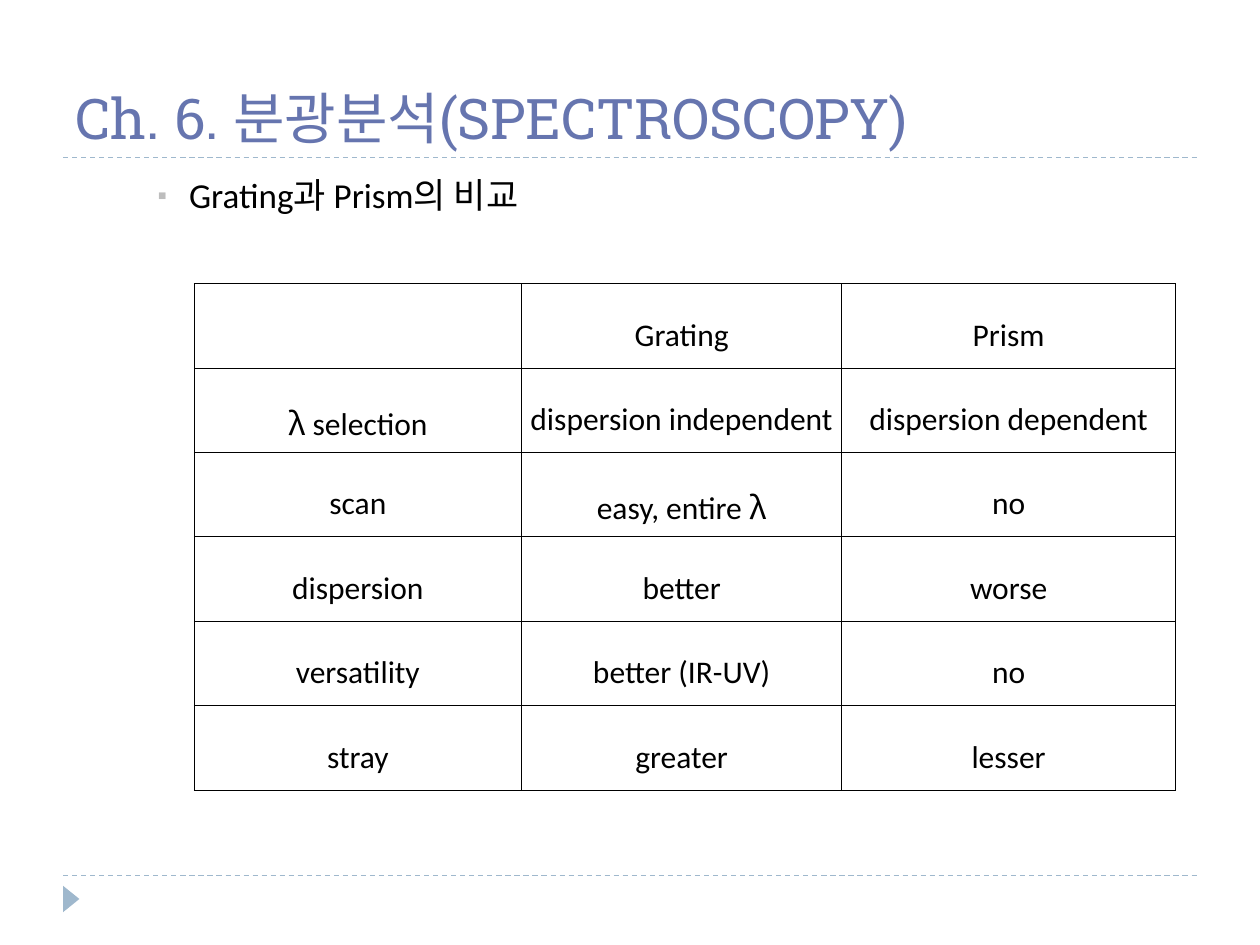
from dataclasses import dataclass

from lxml.etree import SubElement
from pptx import Presentation
from pptx.dml.color import RGBColor
from pptx.enum.dml import MSO_LINE
from pptx.enum.shapes import MSO_CONNECTOR, MSO_SHAPE
from pptx.enum.text import MSO_ANCHOR, PP_ALIGN
from pptx.oxml.ns import qn
from pptx.util import Inches, Pt

COLORS = {
    "title": "6675AF",
    "text": "000000",
    "bullet": "BDBDBD",
    "accent": "9FB8CD",
    "border": "000000",
}
TITLE_FONT = "Roboto Slab"
BODY_FONT = "Calibri"
KOREAN_FONT = "Noto Sans CJK KR"

COLUMN_WIDTHS = (2.6, 2.54, 2.65)
ROW_HEIGHT = 0.67
BORDER_WIDTH = Pt(0.28)


@dataclass(frozen=True)
class Comparison:
    feature: str
    grating: str
    prism: str


COMPARISONS = (
    Comparison("", "Grating", "Prism"),
    Comparison("λ selection", "dispersion independent", "dispersion dependent"),
    Comparison("scan", "easy, entire λ", "no"),
    Comparison("dispersion", "better", "worse"),
    Comparison("versatility", "better (IR-UV)", "no"),
    Comparison("stray", "greater", "lesser"),
)


def rgb(name: str) -> RGBColor:
    return RGBColor.from_string(COLORS[name])


def format_run(run, size: float, font_name: str, color: str) -> None:
    run.font.size = Pt(size)
    run.font.name = font_name
    run.font.color.rgb = rgb(color)
    SubElement(run.font._element, qn("a:ea"), typeface=KOREAN_FONT)


def place(shape, left: float, top: float, width: float, height: float) -> None:
    shape.left, shape.top = Inches(left), Inches(top)
    shape.width, shape.height = Inches(width), Inches(height)


def add_rule(slide, top: float) -> None:
    """Draw a dashed line across the slide between its margins."""
    rule = slide.shapes.add_connector(
        MSO_CONNECTOR.STRAIGHT, Inches(0.5), Inches(top), Inches(9.5), Inches(top))
    rule.line.color.rgb = rgb("accent")
    rule.line.width = Pt(0.75)
    rule.line.dash_style = MSO_LINE.DASH
    SubElement(rule._element.spPr, qn("a:effectLst"))


def add_corner_triangle(slide) -> None:
    triangle = slide.shapes.add_shape(
        MSO_SHAPE.ISOSCELES_TRIANGLE, Inches(0.46), Inches(7.07), Inches(0.21), Inches(0.13))
    triangle.rotation = 90
    triangle.shadow.inherit = False
    triangle.fill.solid()
    triangle.fill.fore_color.rgb = rgb("accent")
    triangle.line.fill.background()


def fill_title(title) -> None:
    place(title, 0.5, 0.17, 9, 1.08)
    text_frame = title.text_frame
    text_frame.text = "Ch. 6. 분광분석(SPECTROSCOPY)"
    text_frame.vertical_anchor = MSO_ANCHOR.BOTTOM
    paragraph = text_frame.paragraphs[0]
    paragraph.alignment = PP_ALIGN.LEFT
    format_run(paragraph.runs[0], 32, TITLE_FONT, "title")


def fill_body(body) -> None:
    place(body, 0.5, 1.33, 9, 5.4)
    body.text_frame.text = "Grating과 Prism의 비교"
    paragraph = body.text_frame.paragraphs[0]
    paragraph.level = 2
    paragraph.space_before = Pt(5)
    format_run(paragraph.runs[0], 20, BODY_FONT, "text")
    properties = paragraph._p.get_or_add_pPr()
    properties.set("marL", str(Inches(0.9)))
    properties.set("indent", str(Inches(-0.25)))
    bullet_color = SubElement(properties, qn("a:buClr"))
    SubElement(bullet_color, qn("a:srgbClr"), val=COLORS["bullet"])
    SubElement(properties, qn("a:buSzPct"), val="76000")
    SubElement(properties, qn("a:buChar"), char="▪")


def add_borders(cell) -> None:
    properties = cell._tc.get_or_add_tcPr()
    for side in ("lnL", "lnR", "lnT", "lnB"):
        line = SubElement(properties, qn(f"a:{side}"), w=str(BORDER_WIDTH))
        fill = SubElement(line, qn("a:solidFill"))
        SubElement(fill, qn("a:srgbClr"), val=COLORS["border"])


def fill_cell(cell, text: str) -> None:
    add_borders(cell)
    cell.fill.background()
    cell.vertical_anchor = MSO_ANCHOR.MIDDLE
    cell.margin_left = cell.margin_right = Inches(0.07)
    cell.margin_top = cell.margin_bottom = Inches(0.02)
    paragraph = cell.text_frame.paragraphs[0]
    paragraph.alignment = PP_ALIGN.CENTER
    paragraph.line_spacing = 1.5
    before, symbol, after = text.partition("λ")
    for part in filter(None, (before, symbol, after)):
        run = paragraph.add_run()
        run.text = part
        format_run(run, 18, KOREAN_FONT if part == "λ" else BODY_FONT, "text")


def add_comparison_table(slide, comparisons: tuple[Comparison, ...]) -> None:
    table = slide.shapes.add_table(
        len(comparisons), len(COLUMN_WIDTHS), Inches(1.54), Inches(2.25),
        Inches(sum(COLUMN_WIDTHS)), Inches(ROW_HEIGHT * len(comparisons))).table
    table.first_row = table.horz_banding = False
    for column, width in zip(table.columns, COLUMN_WIDTHS):
        column.width = Inches(width)
    for row, comparison in zip(table.rows, comparisons):
        row.height = Inches(ROW_HEIGHT)
        texts = (comparison.feature, comparison.grating, comparison.prism)
        for cell, text in zip(row.cells, texts):
            fill_cell(cell, text)


def main() -> None:
    presentation = Presentation()
    presentation.slide_width, presentation.slide_height = Inches(10), Inches(7.5)
    slide = presentation.slides.add_slide(presentation.slide_layouts[1])
    for top in (6.95, 1.25):
        add_rule(slide, top)
    add_corner_triangle(slide)
    fill_title(slide.shapes.title)
    fill_body(slide.placeholders[1])
    add_comparison_table(slide, COMPARISONS)
    presentation.save("out.pptx")


if __name__ == "__main__":
    main()
